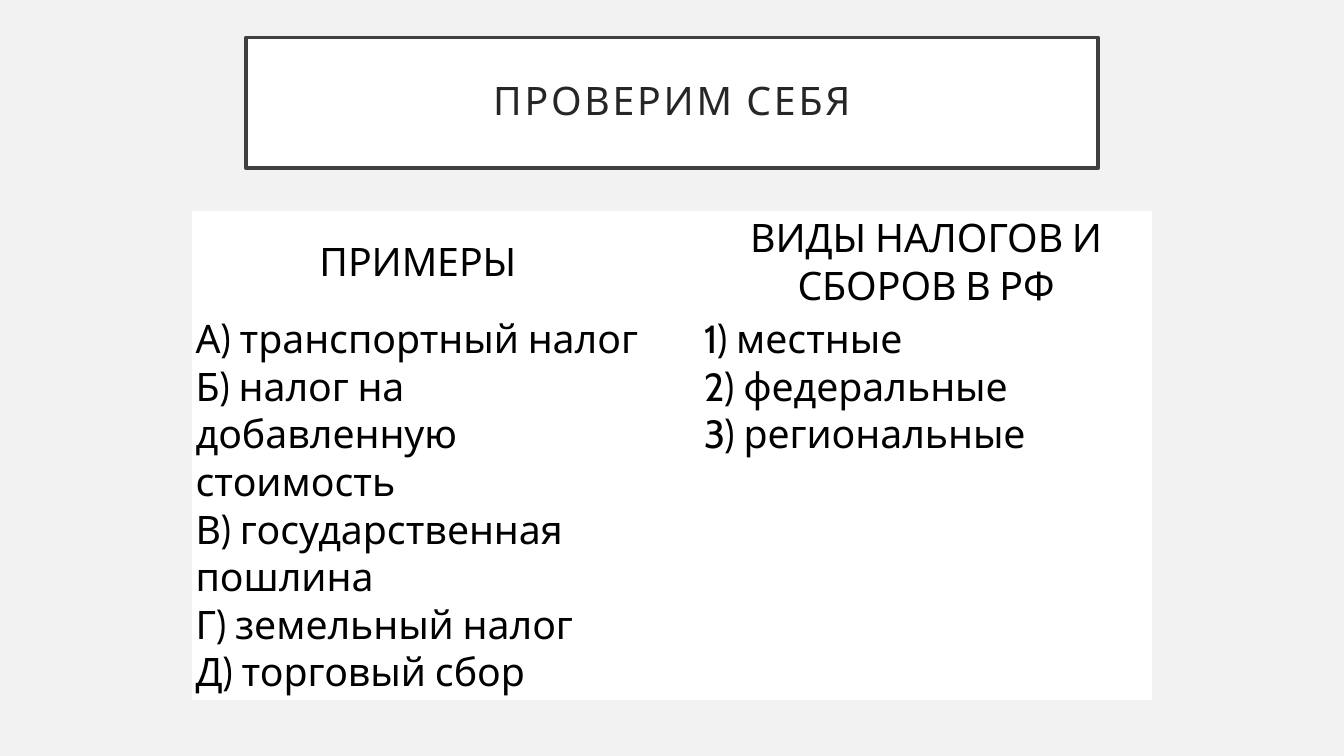
from dataclasses import dataclass

from pptx import Presentation
from pptx.dml.color import RGBColor
from pptx.enum.text import MSO_ANCHOR, MSO_AUTO_SIZE, PP_ALIGN
from pptx.util import Inches, Pt


@dataclass(frozen=True)
class Theme:
    font: str = "Cabin"
    size: int = 28
    back: str = "F2F2F2"
    panel: str = "FFFFFF"
    frame: str = "404040"
    head: str = "262626"
    body: str = "000000"
    edge: float = 2.5
    track: int = 2
    pad: float = 0.2
    inset: float = 0.03


def paint(fill, color):
    fill.solid()
    fill.fore_color.rgb = RGBColor.from_string(color)


class Deck:
    """Holds the theme and the current slide; lengths are percent of the slide."""

    def __init__(self, theme):
        self.theme = theme
        self.show = Presentation()
        self.show.slide_width = Inches(13.33)
        self.show.slide_height = Inches(7.5)
        self.slide = self.show.slides.add_slide(self.show.slide_layouts[5])
        paint(self.slide.background.fill, theme.back)

    def wide(self, share):
        return round(self.show.slide_width * share / 100)

    def high(self, share):
        return round(self.show.slide_height * share / 100)

    def box(self, left, top, width, height):
        return self.wide(left), self.high(top), self.wide(width), self.high(height)

    def pad(self, item, inches):
        item.margin_left = item.margin_right = Inches(inches)
        item.margin_top = item.margin_bottom = Inches(inches)

    def text(self, frame, lines, color, align):
        for index, line in enumerate(lines):
            para = frame.add_paragraph() if index else frame.paragraphs[0]
            para.alignment = align
            run = para.add_run()
            run.text = line
            run.font.name = self.theme.font
            run.font.size = Pt(self.theme.size)
            run.font.bold = False
            run.font.color.rgb = RGBColor.from_string(color)

    def title(self, text, area):
        shape = self.slide.shapes.title
        shape.left, shape.top, shape.width, shape.height = self.box(*area)
        paint(shape.fill, self.theme.panel)
        paint(shape.line.fill, self.theme.frame)
        shape.line.width = Pt(self.theme.edge)
        frame = shape.text_frame
        frame.word_wrap = True
        frame.auto_size = MSO_AUTO_SIZE.NONE
        frame.vertical_anchor = MSO_ANCHOR.MIDDLE
        self.pad(frame, self.theme.pad)
        self.text(frame, [text], self.theme.head, PP_ALIGN.CENTER)
        para = frame.paragraphs[0]
        para.line_spacing = 0.9
        para.runs[0].font._element.set("spc", str(self.theme.track * 100))

    def table(self, data, area, cols, rows):
        """Draw a plain table whose first row is centred."""
        holder = self.slide.shapes.add_table(len(rows), len(cols), *self.box(*area))
        grid = holder.table
        grid.first_row = grid.horz_banding = False
        for col, share in zip(grid.columns, cols):
            col.width = self.wide(share)
        for row, share in zip(grid.rows, rows):
            row.height = self.high(share)
        holder.height = self.high(area[3])
        for r, line in enumerate(data):
            anchor = MSO_ANCHOR.TOP if r else MSO_ANCHOR.MIDDLE
            align = PP_ALIGN.LEFT if r else PP_ALIGN.CENTER
            for c, texts in enumerate(line):
                cell = grid.cell(r, c)
                paint(cell.fill, self.theme.panel)
                cell.vertical_anchor = anchor
                self.pad(cell, self.theme.inset)
                self.text(cell.text_frame, texts, self.theme.body, align)


def main():
    deck = Deck(Theme())
    deck.title("ПРОВЕРИМ СЕБЯ", (18.3, 4.93, 63.4, 17.33))
    taxes = [
        "А) транспортный налог",
        "Б) налог на добавленную стоимость",
        "В) государственная пошлина",
        "Г) земельный налог",
        "Д) торговый сбор",
    ]
    kinds = ["1) местные", "2) федеральные", "3) региональные"]
    deck.table(
        [
            [["ПРИМЕРЫ"], [], ["ВИДЫ НАЛОГОВ И СБОРОВ В РФ"]],
            [taxes, [], kinds],
        ],
        area=(14.33, 28, 71.34, 57.47),
        cols=(33.53, 4.28, 33.53),
        rows=(10.13, 27.6),
    )
    deck.show.save("out.pptx")


if __name__ == "__main__":
    main()
